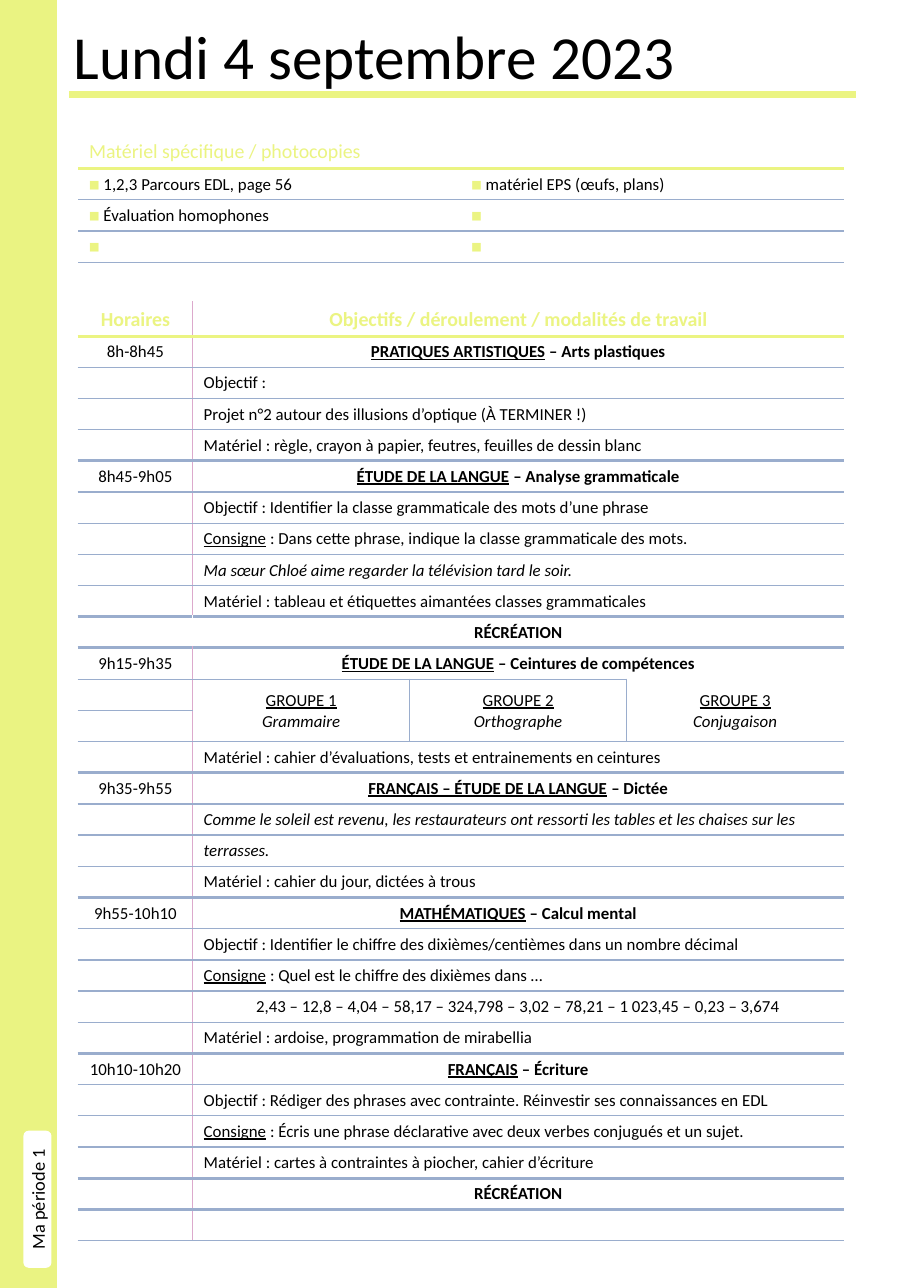
from lxml.etree import SubElement
from pptx import Presentation
from pptx.dml.color import RGBColor
from pptx.enum.shapes import MSO_CONNECTOR, MSO_SHAPE
from pptx.enum.text import MSO_ANCHOR, PP_ALIGN
from pptx.oxml.ns import qn
from pptx.util import Inches, Pt

COLOURS = {"band": "EAF382", "accent": "EBF482", "rule": "9AADCD", "margin": "DCA9CC",
           "paper": "FFFFFF", "ink": "000000"}
FONT = "Calibri"
WIDTH, HEIGHT = 8.27, 11.69
THIN, THICK = 1, 2.25
HEADING_HEIGHT = 0.31

TITLE = "Lundi 4 septembre 2023"
PERIOD = "Ma période 1"
BULLET = "◼︎"
SUPPLIES_HEADING = "Matériel spécifique / photocopies"
SUPPLIES = [("1,2,3 Parcours EDL, page 56", "matériel EPS (œufs, plans)"),
            ("Évaluation homophones", ""),
            ("", "")]
HEADINGS = ("Horaires", "Objectifs / déroulement / modalités de travail")
GROUPS = [("GROUPE 1", "Grammaire"), ("GROUPE 2", "Orthographe"), ("GROUPE 3", "Conjugaison")]

# (time, kind, text); underscores enclose underlined words
SCHEDULE = [
    ("8h-8h45", "subject", "_PRATIQUES ARTISTIQUES_ – Arts plastiques"),
    ("", "text", "Objectif :"),
    ("", "text", "Projet n°2 autour des illusions d’optique (À TERMINER !)"),
    ("", "text", "Matériel : règle, crayon à papier, feutres, feuilles de dessin blanc"),
    ("8h45-9h05", "subject", "_ÉTUDE DE LA LANGUE_ – Analyse grammaticale"),
    ("", "text", "Objectif : Identifier la classe grammaticale des mots d’une phrase"),
    ("", "text", "_Consigne_ : Dans cette phrase, indique la classe grammaticale des mots."),
    ("", "quote", "Ma sœur Chloé aime regarder la télévision tard le soir."),
    ("", "text", "Matériel : tableau et étiquettes aimantées classes grammaticales"),
    ("", "open break", "RÉCRÉATION"),
    ("9h15-9h35", "subject", "_ÉTUDE DE LA LANGUE_ – Ceintures de compétences"),
    ("", "groups", ""),
    ("", "groups end", ""),
    ("", "text", "Matériel : cahier d’évaluations, tests et entrainements en ceintures"),
    ("9h35-9h55", "subject", "_FRANÇAIS – ÉTUDE DE LA LANGUE_ – Dictée"),
    ("", "quote", "Comme le soleil est revenu, les restaurateurs ont ressorti "
                  "les tables et les chaises sur les"),
    ("", "quote", "terrasses."),
    ("", "text", "Matériel : cahier du jour, dictées à trous"),
    ("9h55-10h10", "subject", "_MATHÉMATIQUES_ – Calcul mental"),
    ("", "text", "Objectif : Identifier le chiffre des dixièmes/centièmes dans un nombre décimal"),
    ("", "text", "_Consigne_ : Quel est le chiffre des dixièmes dans …"),
    ("", "numbers", "2,43 – 12,8 – 4,04 – 58,17 – 324,798 – 3,02 – 78,21 – 1 023,45 – 0,23 – 3,674"),
    ("", "text", "Matériel : ardoise, programmation de mirabellia"),
    ("10h10-10h20", "subject", "_FRANÇAIS_ – Écriture"),
    ("", "text", "Objectif : Rédiger des phrases avec contrainte. "
                 "Réinvestir ses connaissances en EDL"),
    ("", "text", "_Consigne_ : Écris une phrase déclarative avec deux verbes conjugués et un sujet."),
    ("", "text", "Matériel : cartes à contraintes à piocher, cahier d’écriture"),
    ("", "break", "RÉCRÉATION"),
    ("", "text", ""),
]
ROW_HEIGHT = (8.53 - HEADING_HEIGHT) / len(SCHEDULE)
BOLD = {"bold": True}
CENTRED_KINDS = ("subject", "break", "open break", "numbers")
KIND_FORMATS = {"subject": BOLD, "break": BOLD, "open break": BOLD, "quote": {"italic": True}}


def colour(name):
    return RGBColor.from_string(COLOURS[name])


def add_run(paragraph, text, size=11, ink="ink", **formats):
    run = paragraph.add_run()
    run.text = text
    for name, value in {"name": FONT, "size": Pt(size), "bold": False, **formats}.items():
        setattr(run.font, name, value)
    run.font.color.rgb = colour(ink)


def add_marked_text(paragraph, text, **formats):
    for index, part in enumerate(text.split("_")):
        if part:
            add_run(paragraph, part, underline=index % 2 == 1, **formats)


def add_plain_shape(slide, preset, box, fill):
    shape = slide.shapes.add_shape(preset, *[Inches(length) for length in box])
    shape.shadow.inherit = False
    shape.fill.solid()
    shape.fill.fore_color.rgb = shape.line.color.rgb = colour(fill)
    shape.line.width = Pt(1)
    return shape


def add_ruled_table(slide, left, top, column_widths, body_rows):
    row_heights = [HEADING_HEIGHT] + [ROW_HEIGHT] * body_rows
    frame = slide.shapes.add_table(len(row_heights), len(column_widths), Inches(left), Inches(top),
                                   Inches(sum(column_widths)), Inches(sum(row_heights)))
    table = frame.table
    table.first_row = table.horz_banding = False
    for column, width in zip(table.columns, column_widths):
        column.width = Inches(width)
    for row, height in zip(table.rows, row_heights):
        row.height = Inches(height)
    return table


def finish_cells(table, horizontal, vertical):
    """Draw each cell's edges as the two rules say, fill it, and size empty text."""
    for row in range(len(table.rows)):
        for column in range(len(table.columns)):
            cell = table.cell(row, column)
            cell.margin_bottom = Inches(0.04)
            properties = cell._tc.get_or_add_tcPr()
            edges = {"lnL": vertical(row, column), "lnR": vertical(row, column + 1),
                     "lnT": horizontal(row, column), "lnB": horizontal(row + 1, column)}
            for tag, edge in edges.items():
                line = SubElement(properties, qn("a:" + tag))
                if edge is None:
                    SubElement(line, qn("a:noFill"))
                    continue
                name, width = edge
                line.set("w", str(Pt(width)))
                fill = SubElement(line, qn("a:solidFill"))
                SubElement(fill, qn("a:srgbClr")).set("val", COLOURS[name])
            cell.fill.solid()
            cell.fill.fore_color.rgb = colour("paper")
            if not cell.text_frame.text:
                end = SubElement(cell.text_frame.paragraphs[0]._p, qn("a:endParaRPr"))
                end.set("sz", "1100")
                SubElement(end, qn("a:latin")).set("typeface", FONT)


def add_supplies(slide):
    table = add_ruled_table(slide, 0.71, 1.22, [3.47, 3.48], len(SUPPLIES))
    add_run(table.cell(0, 0).text_frame.paragraphs[0], SUPPLIES_HEADING, 13, "accent")
    for row, items in enumerate(SUPPLIES, 1):
        for column, item in enumerate(items):
            paragraph = table.cell(row, column).text_frame.paragraphs[0]
            add_run(paragraph, BULLET + (" " if item else ""), ink="accent")
            if item:
                add_run(paragraph, item)

    def horizontal(row, column):
        return {0: None, 1: ("accent", THICK)}.get(row, ("rule", THIN))

    finish_cells(table, horizontal, lambda row, column: None)


def add_schedule(slide):
    kinds = ["heading"] + [kind for _, kind, _ in SCHEDULE]
    table = add_ruled_table(slide, 0.71, 2.74, [1.04] + [1.97] * 3, len(SCHEDULE))
    group_row = kinds.index("groups")

    for column, heading in enumerate(HEADINGS):
        paragraph = table.cell(0, column).text_frame.paragraphs[0]
        paragraph.alignment = PP_ALIGN.CENTER
        add_run(paragraph, heading, 13, "accent", bold=True)
    for row, (time, kind, text) in enumerate(SCHEDULE, 1):
        time_paragraph = table.cell(row, 0).text_frame.paragraphs[0]
        if time:
            time_paragraph.alignment = PP_ALIGN.CENTER
            add_run(time_paragraph, time)
        paragraph = table.cell(row, 1).text_frame.paragraphs[0]
        if kind in CENTRED_KINDS:
            paragraph.alignment = PP_ALIGN.CENTER
        add_marked_text(paragraph, text, **KIND_FORMATS.get(kind, {}))

    for column, (group, topic) in enumerate(GROUPS, 1):
        cell = table.cell(group_row, column)
        cell.vertical_anchor = MSO_ANCHOR.MIDDLE
        name_line = cell.text_frame.paragraphs[0]
        topic_line = cell.text_frame.add_paragraph()
        name_line.alignment = topic_line.alignment = PP_ALIGN.CENTER
        add_run(name_line, group, underline=True)
        add_run(topic_line, topic, italic=True)

    def horizontal(row, column):
        if row == 0 or (row, column) == (group_row, len(GROUPS)):
            return "paper", THIN
        if row == 1:
            return "accent", THICK
        section_starts = row < len(kinds) and ("break" in kinds[row - 1]
                                               or kinds[row] in ("subject", "break", "open break"))
        return "rule", THICK if section_starts else THIN

    def vertical(row, column):
        if column == 1 and kinds[row] != "open break":
            return "margin", THIN
        if column in (2, 3) and kinds[row].startswith("groups"):
            return "rule", THIN
        return "paper", THIN

    finish_cells(table, horizontal, vertical)
    for row, kind in enumerate(kinds):
        if not kind.startswith("groups"):
            table.cell(row, 1).merge(table.cell(row, 3))
    for column in range(1, len(GROUPS) + 1):
        table.cell(group_row, column).merge(table.cell(group_row + 1, column))


def add_title(slide):
    title = slide.shapes.title
    title.left, title.top, title.width, title.height = map(Inches, (0.57, 0.12, 7.32, 0.77))
    title.text_frame.vertical_anchor = MSO_ANCHOR.TOP
    paragraph = title.text_frame.paragraphs[0]
    paragraph.alignment = PP_ALIGN.LEFT
    add_run(paragraph, TITLE, 40)
    underline = slide.shapes.add_connector(MSO_CONNECTOR.STRAIGHT, Inches(0.63), Inches(0.86),
                                           Inches(7.77), Inches(0.86))
    underline.line.color.rgb = colour("accent")
    underline.line.width = Pt(4.75)
    SubElement(underline.element.spPr, qn("a:effectLst"))


def main():
    presentation = Presentation()
    presentation.slide_width, presentation.slide_height = Inches(WIDTH), Inches(HEIGHT)
    slide = presentation.slides.add_slide(presentation.slide_layouts[5])
    add_plain_shape(slide, MSO_SHAPE.RECTANGLE, (0, 0, 0.51, HEIGHT), "band")
    tab = add_plain_shape(slide, MSO_SHAPE.ROUNDED_RECTANGLE, (0.22, 10.27, 0.24, 1.23), "paper")
    tab.element.txBody.bodyPr.set("vert", "vert270")
    tab.text_frame.paragraphs[0].alignment = PP_ALIGN.CENTER
    add_run(tab.text_frame.paragraphs[0], PERIOD, 12)
    add_title(slide)
    add_supplies(slide)
    add_schedule(slide)
    presentation.save("out.pptx")


if __name__ == "__main__":
    main()
